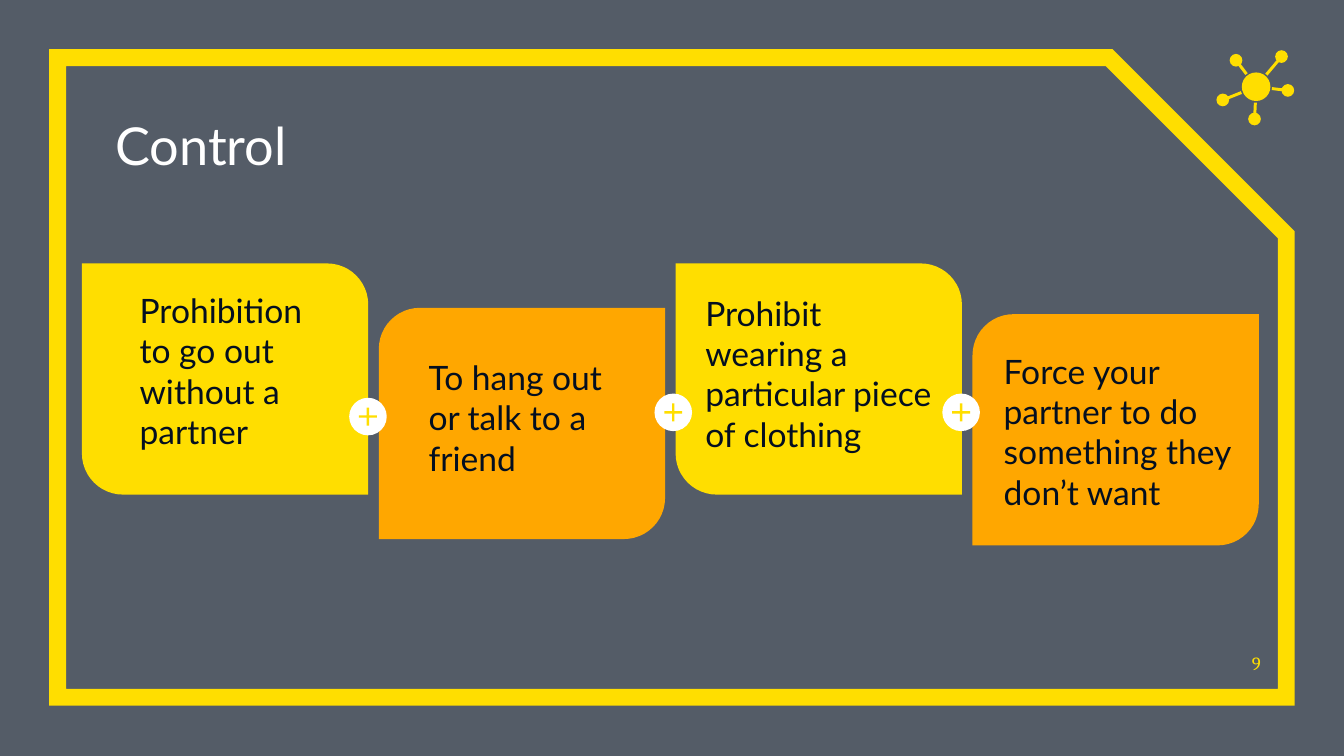
from math import hypot

from lxml import etree
from pptx import Presentation
from pptx.dml.color import RGBColor
from pptx.enum.shapes import MSO_CONNECTOR, MSO_SHAPE
from pptx.enum.text import MSO_ANCHOR, MSO_AUTO_SIZE, PP_ALIGN
from pptx.oxml import parse_xml
from pptx.oxml.ns import nsdecls, qn
from pptx.util import Cm, Pt

OVAL, PLUS = MSO_SHAPE.OVAL, MSO_SHAPE.MATH_PLUS
CARD, FRAME = MSO_SHAPE.ROUND_2_DIAG_RECTANGLE, MSO_SHAPE.SNIP_1_RECTANGLE
STRAIGHT = MSO_CONNECTOR.STRAIGHT
BOTTOM, TOP = MSO_ANCHOR.BOTTOM, MSO_ANCHOR.TOP
LEFT, RIGHT = PP_ALIGN.LEFT, PP_ALIGN.RIGHT

COLORS = {
    name: RGBColor.from_string(value)
    for name, value in {
        "slate": "545C67", "yellow": "FFDE00", "orange": "FFA700",
        "white": "FFFFFF", "navy": "040F20",
    }.items()
}


def add_filled(page, kind, left, top, width, height, color):
    shape = page.shapes.add_shape(kind, Cm(left), Cm(top), Cm(width), Cm(height))
    shape.shadow.inherit = False
    shape.fill.solid()
    shape.fill.fore_color.rgb = COLORS[color]
    shape.line.fill.background()
    return shape


def write_text(box, text, size, color, font="Lato", anchor=TOP, align=LEFT, margin=0):
    frame = box.text_frame
    frame.word_wrap = True
    frame.auto_size = MSO_AUTO_SIZE.NONE
    frame.vertical_anchor = anchor
    frame.margin_left = frame.margin_right = Cm(margin)
    frame.margin_top = frame.margin_bottom = Cm(margin)
    para = frame.paragraphs[0]
    para.alignment = align
    span = para.add_run()
    span.text = text
    span.font.size = Pt(size)
    span.font.name = font
    span.font.color.rgb = COLORS[color]
    return span


deck = Presentation()
deck.slide_width, deck.slide_height = Cm(25.4), Cm(14.29)
page = deck.slides.add_slide(deck.slide_layouts[5])

# Background and frame with the cut corner
page.background.fill.solid()
page.background.fill.fore_color.rgb = COLORS["slate"]
border = add_filled(page, FRAME, 1.09, 1.09, 23.22, 12.09, "slate")
border.fill.background()
border.adjustments[0] = 0.277
border.line.color.rgb = COLORS["yellow"]
border.line.width = Pt(9)
outline = border.element.spPr.find(qn("a:ln"))
etree.SubElement(outline, qn("a:miter"), lim="800000")

# Title with a soft text shadow
title = page.shapes.title
title.left, title.top, title.width, title.height = Cm(2.18), Cm(1.98), Cm(18.67), Cm(1.35)
span = write_text(title, "Control", 28, "white", anchor=BOTTOM)
shadow = parse_xml(
    f'<a:effectLst {nsdecls("a")}>'
    '<a:outerShdw blurRad="38100" dist="38100" dir="2700000" algn="tl">'
    '<a:srgbClr val="000000"><a:alpha val="43000"/></a:srgbClr>'
    "</a:outerShdw></a:effectLst>"
)
span.font.fill.solid()
span.font.color.rgb = COLORS["white"]
span.font._element.find(qn("a:solidFill")).addnext(shadow)

# Page number
number = page.shapes.add_textbox(Cm(23.14), Cm(12.04), Cm(0.69), Cm(0.71))
write_text(number, "9", 10, "yellow", font="Cambria", anchor=BOTTOM, align=RIGHT)

# Network icon: a hub, and satellites on spokes that stop short of it
hub_x, hub_y, hub_radius, node_radius, spoke_gap = 23.74, 1.64, 0.27, 0.12, 0.03
add_filled(page, OVAL, hub_x - hub_radius, hub_y - hub_radius,
           2 * hub_radius, 2 * hub_radius, "yellow")
for x, y in [(24.22, 1.07), (23.36, 1.14), (23.11, 1.89), (23.71, 2.25), (24.34, 1.71)]:
    share = (hub_radius + spoke_gap) / hypot(x - hub_x, y - hub_y)
    spoke = page.shapes.add_connector(
        STRAIGHT, Cm(hub_x + share * (x - hub_x)), Cm(hub_y + share * (y - hub_y)),
        Cm(x), Cm(y))
    spoke.line.color.rgb = COLORS["yellow"]
    spoke.line.width = Pt(1.6)
    etree.SubElement(spoke.element.spPr, qn("a:effectLst"))
    add_filled(page, OVAL, x - node_radius, y - node_radius,
               2 * node_radius, 2 * node_radius, "yellow")

# Cards: colour and rounded corners alternate; text left, top and width follow
cards = [
    (4.98, "Prohibition to go out without a partner", 2.39, 5.23, 4.04),
    (5.82, "To hang out or talk to a friend", 7.85, 6.5, 4.04),
    (4.98, "Prohibit wearing a particular piece of clothing", 13.08, 5.28, 4.98),
    (5.94, "Force your partner to do something they don’t want", 18.72, 6.38, 5.41),
]
card_left, card_pitch, card_width, card_height = 1.55, 5.61, 5.41, 4.37
for index, (top, text, text_left, text_top, text_width) in enumerate(cards):
    lowered = index % 2 == 1
    card = add_filled(page, CARD, card_left + index * card_pitch, top, card_width,
                      card_height, "orange" if lowered else "yellow")
    card.adjustments[0] = 0.178 if lowered else 0
    card.adjustments[1] = 0 if lowered else 0.178
    box = page.shapes.add_textbox(Cm(text_left), Cm(text_top), Cm(text_width), Cm(3.58))
    write_text(box, text, 18, "navy", margin=0.25)

# Plus badges between the cards
badge_size, plus_size = 0.71, 0.46
inset = (badge_size - plus_size) / 2
for left, top in [(6.6, 7.52), (12.37, 7.44), (17.81, 7.44)]:
    add_filled(page, OVAL, left, top, badge_size, badge_size, "white")
    plus = add_filled(page, PLUS, left + inset, top + inset, plus_size, plus_size, "yellow")
    plus.adjustments[0] = 0.099

deck.save("out.pptx")
